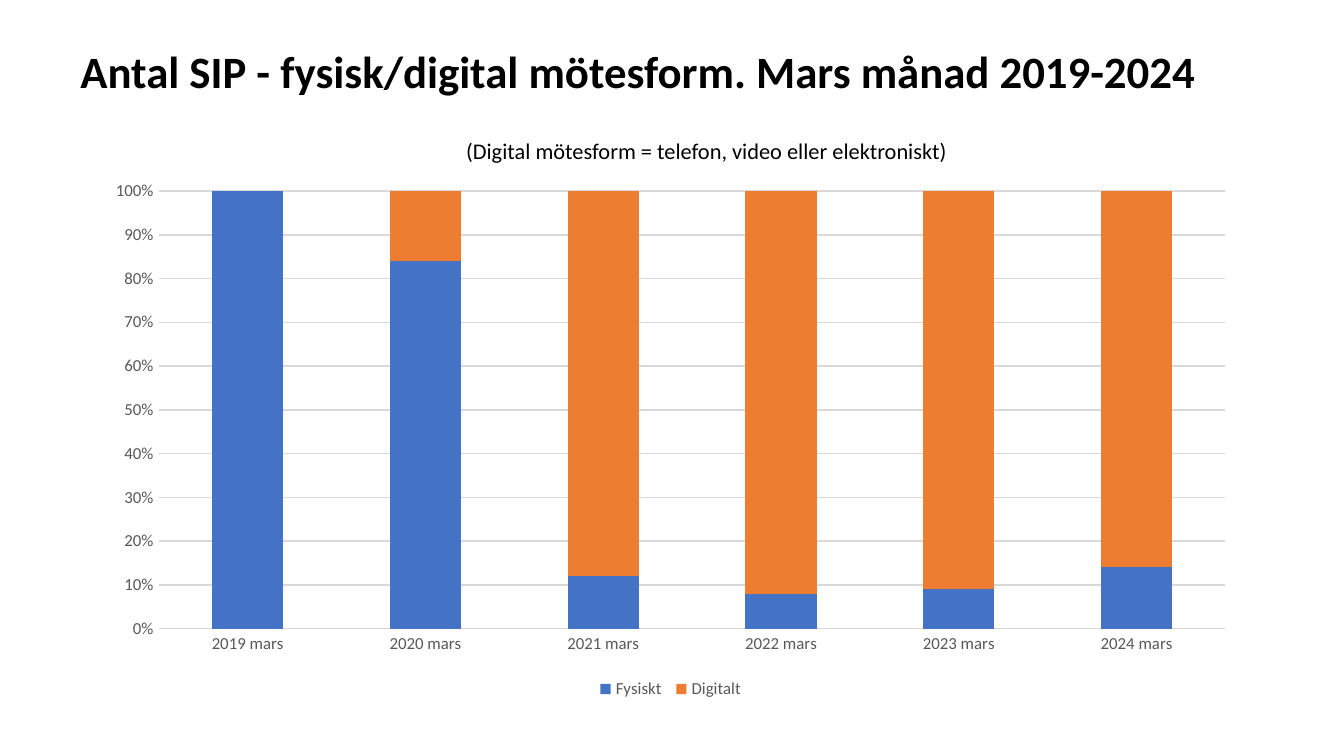
from dataclasses import dataclass

from pptx import Presentation
from pptx.chart import data as cd
from pptx.dml.color import RGBColor
from pptx.enum import chart as ec, text as et
from pptx.util import Inches, Pt

FONT = "Calibri"
BLACK = RGBColor(0x00, 0x00, 0x00)
GRAY = RGBColor(0x59, 0x59, 0x59)
GRID = RGBColor(0xD9, 0xD9, 0xD9)
BLUE = RGBColor(0x44, 0x72, 0xC4)
ORANGE = RGBColor(0xED, 0x7D, 0x31)


@dataclass
class Label:
    text: str
    box: tuple[float, float, float, float]
    size: int
    bold: bool = False
    anchor: et.MSO_ANCHOR = et.MSO_ANCHOR.TOP
    space: float = 1.0


@dataclass
class Series:
    name: str
    vals: list[int]
    color: RGBColor


LABELS = [
    Label("Antal SIP - fysisk/digital mötesform. Mars månad 2019-2024",
          (0.5, 0.27, 9.11, 0.56), 24, True, et.MSO_ANCHOR.MIDDLE, 0.9),
    Label("(Digital mötesform = telefon, video eller elektroniskt)",
          (3.37, 0.97, 6.24, 0.3), 12),
]
MONTHS = [f"{year} mars" for year in range(2019, 2025)]
SHARES = [100, 84, 12, 8, 9, 14]
SERIES = [
    Series("Fysiskt ", SHARES, BLUE),
    Series("Digitalt", [100 - share for share in SHARES], ORANGE),
]


def style(font, size: int, color: RGBColor, bold: bool = False) -> None:
    font.name = FONT
    font.size = Pt(size)
    font.bold = bold
    font.color.rgb = color


def rule(line) -> None:
    line.color.rgb = GRID
    line.width = Pt(0.75)


def write(slide, label: Label) -> None:
    frame = slide.shapes.add_textbox(*map(Inches, label.box)).text_frame
    frame.word_wrap = True
    frame.vertical_anchor = label.anchor
    para = frame.paragraphs[0]
    para.text = label.text
    para.line_spacing = label.space
    style(para.font, label.size, BLACK, label.bold)


def plot(slide, box: tuple[float, float, float, float]) -> None:
    data = cd.CategoryChartData()
    data.categories = MONTHS
    for item in SERIES:
        data.add_series(item.name, item.vals)
    chart = slide.shapes.add_chart(
        ec.XL_CHART_TYPE.COLUMN_STACKED_100, *map(Inches, box), data).chart
    style(chart.font, 10, BLACK)
    chart.has_title = False

    bars = chart.plots[0]
    bars.gap_width = 150
    bars.overlap = 100
    bars.vary_by_categories = False
    for bar, item in zip(bars.series, SERIES):
        bar.format.fill.solid()
        bar.format.fill.fore_color.rgb = item.color

    months, shares = chart.category_axis, chart.value_axis
    for axis in (months, shares):
        axis.major_tick_mark = axis.minor_tick_mark = ec.XL_TICK_MARK.NONE
        style(axis.tick_labels.font, 9, GRAY)
    rule(months.format.line)
    shares.format.line.fill.background()
    shares.has_major_gridlines = True
    rule(shares.major_gridlines.format.line)
    shares.tick_labels.number_format = "0%"
    shares.tick_labels.number_format_is_linked = False

    chart.has_legend = True
    chart.legend.position = ec.XL_LEGEND_POSITION.BOTTOM
    chart.legend.include_in_layout = False
    style(chart.legend.font, 9, GRAY)


def main() -> None:
    deck = Presentation()
    deck.slide_width = Inches(10)
    deck.slide_height = deck.slide_width * 9 // 16
    slide = deck.slides.add_slide(deck.slide_layouts[6])
    for label in LABELS:
        write(slide, label)
    plot(slide, (0.69, 1.27, 8.6, 3.97))
    deck.save("out.pptx")


if __name__ == "__main__":
    main()
